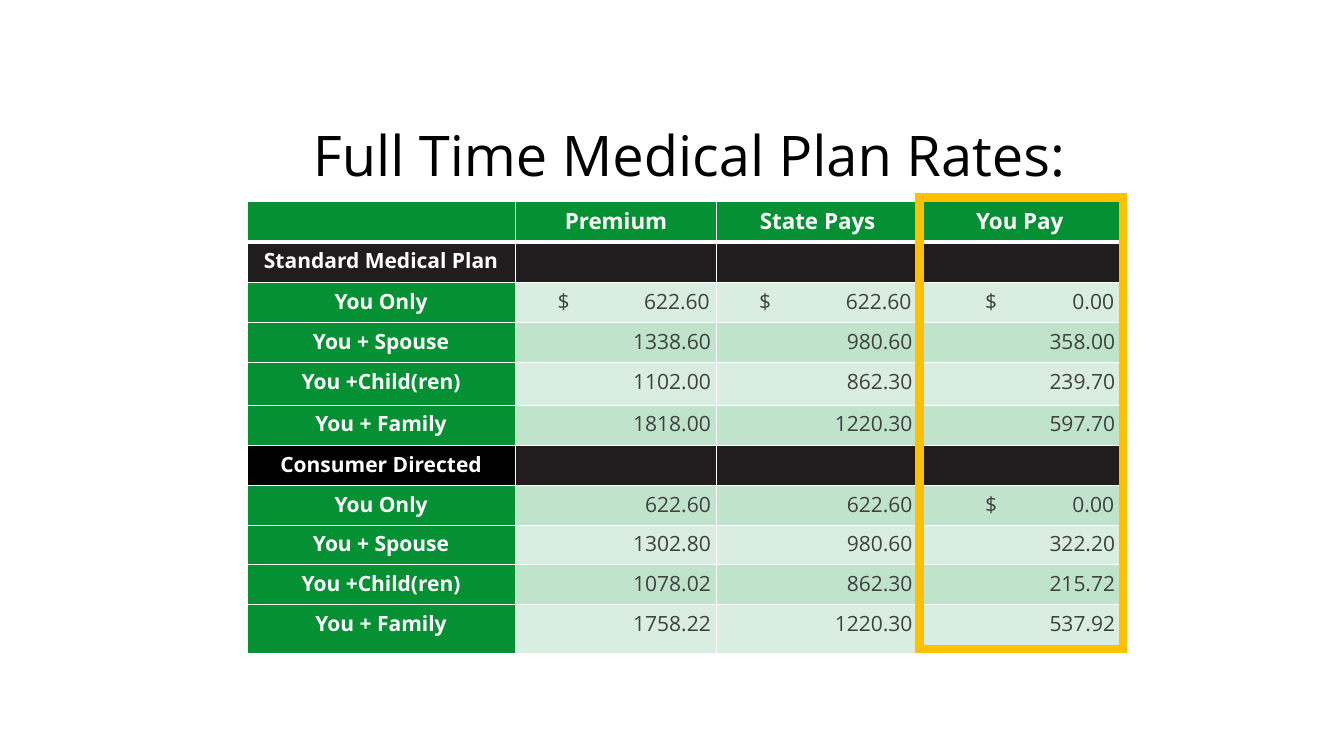
import pptx
import pptx.dml.color
import pptx.enum.shapes
import pptx.enum.text
import pptx.oxml
import pptx.oxml.ns
import pptx.util
from pptx.util import Inches

COLORS = {
    "green": "059033",
    "charcoal": "211D1E",
    "black": "000000",
    "white": "FFFFFF",
    "figure": "404040",
    "gold": "FFC000",
}
FONT = "Open Sans"
ALIGN = pptx.enum.text.PP_ALIGN

COLUMN_WIDTHS = [2.66, 2, 2, 2.01]
ROW_HEIGHTS = [0.4, 0.4, 0.4, 0.4, 0.42, 0.4, 0.4, 0.39, 0.39, 0.4, 0.48]
CELL_MARGIN = 0.06
PLAN_ROWS = (1, 6)
# A tab before and after the dollar sign places it apart from its amount
RATES = [
    ["", "Premium", "State Pays", "You Pay"],
    ["Standard Medical Plan", "", "", ""],
    ["You Only", "\t$\t622.60", "\t$\t622.60", "\t$\t0.00"],
    ["You + Spouse", "1338.60", "980.60", "358.00"],
    ["You +Child(ren)", "1102.00", "862.30", "239.70"],
    ["You + Family", "1818.00", "1220.30", "597.70"],
    ["Consumer Directed", "", "", ""],
    ["You Only", "622.60", "622.60", "\t$\t0.00"],
    ["You + Spouse", "1302.80", "980.60", "322.20"],
    ["You +Child(ren)", "1078.02", "862.30", "215.72"],
    ["You + Family", "1758.22", "1220.30", "537.92"],
]


def rgb(name):
    return pptx.dml.color.RGBColor.from_string(COLORS[name])


def add_xml(parent, xml):
    namespace = pptx.oxml.ns.nsdecls("a")
    element = pptx.oxml.parse_xml(xml.replace(" ", f" {namespace} ", 1))
    parent.append(element)


def format_font(font, size, color, bold=False):
    font.name = FONT
    font.size = pptx.util.Pt(size)
    font.bold = bold
    font.color.rgb = rgb(color)


def add_title(slide, text):
    title = slide.shapes.title
    title.left, title.top = Inches(2.45), Inches(1.18)
    title.width, title.height = Inches(8.77), Inches(0.78)
    frame = title.text_frame
    frame.text = text
    frame.auto_size = pptx.enum.text.MSO_AUTO_SIZE.NONE
    frame.vertical_anchor = pptx.enum.text.MSO_ANCHOR.MIDDLE
    paragraph = frame.paragraphs[0]
    paragraph.alignment = ALIGN.CENTER
    paragraph.line_spacing = 0.9
    format_font(paragraph.font, 40, "black")


def set_borders(cell, row):
    widths = {"L": 1, "R": 1, "T": 3 if row == 1 else 1, "B": 3 if row == 0 else 1}
    for side, points in widths.items():
        add_xml(
            cell._tc.get_or_add_tcPr(),
            f'<a:ln{side} w="{pptx.util.Pt(points)}"><a:solidFill>'
            f'<a:srgbClr val="{COLORS["white"]}"/></a:solidFill></a:ln{side}>',
        )


def set_fill(cell, row, column):
    is_figure = row > 0 and row not in PLAN_ROWS and column > 0
    color = "green"
    if row in PLAN_ROWS:
        color = "black" if (row, column) == (6, 0) else "charcoal"
    cell.fill.solid()
    cell.fill.fore_color.rgb = rgb(color)
    if is_figure:
        opacity = 15 if row % 2 == 0 else 25
        # The fill is the last child, after the border lines
        swatch = cell._tc.tcPr[-1][0]
        add_xml(swatch, f'<a:alpha val="{opacity * 1000}"/>')
    return is_figure


def set_dollar_tabs(paragraph, column, amount):
    sign = 0.6 if amount.endswith("\t0.00") else 0.36
    edge = COLUMN_WIDTHS[column] - 2 * CELL_MARGIN - 0.01
    add_xml(
        paragraph._p.get_or_add_pPr(),
        f'<a:tabLst ><a:tab pos="{Inches(sign)}" algn="l"/>'
        f'<a:tab pos="{Inches(edge)}" algn="r"/></a:tabLst>',
    )


def fill_cell(cell, row, column, text):
    set_borders(cell, row)
    is_figure = set_fill(cell, row, column)
    cell.margin_left = cell.margin_right = Inches(CELL_MARGIN)
    cell.margin_top = cell.margin_bottom = 0
    cell.text = text
    paragraph = cell.text_frame.paragraphs[0]
    paragraph.line_spacing = 1.15
    if "\t" in text:
        paragraph.alignment = ALIGN.LEFT
        set_dollar_tabs(paragraph, column, text)
    else:
        paragraph.alignment = ALIGN.RIGHT if is_figure else ALIGN.CENTER
    size = 16 if row == 0 else 15
    format_font(paragraph.font, size, "figure" if is_figure else "white", not is_figure)


def add_rate_table(slide):
    frame = slide.shapes.add_table(
        len(ROW_HEIGHTS), len(COLUMN_WIDTHS), Inches(2.45), Inches(2),
        Inches(sum(COLUMN_WIDTHS)), Inches(sum(ROW_HEIGHTS)),
    )
    table = frame.table
    table.first_row = table.horz_banding = False
    for column, width in zip(table.columns, COLUMN_WIDTHS):
        column.width = Inches(width)
    for row, height in zip(table.rows, ROW_HEIGHTS):
        row.height = Inches(height)
    for row, texts in enumerate(RATES):
        for column, text in enumerate(texts):
            fill_cell(table.cell(row, column), row, column, text)


def add_highlight(slide):
    shape = slide.shapes.add_shape(
        pptx.enum.shapes.MSO_SHAPE.RECTANGLE,
        Inches(9.12), Inches(1.96), Inches(2.02), Inches(4.48),
    )
    shape.shadow.inherit = False
    shape.fill.background()
    shape.line.color.rgb = rgb("gold")
    shape.line.width = pptx.util.Pt(6)
    add_xml(shape.line._get_or_add_ln(), '<a:miter lim="800000"/>')


def main():
    presentation = pptx.Presentation()
    presentation.slide_width = Inches(13.33)
    presentation.slide_height = Inches(7.5)
    slide = presentation.slides.add_slide(presentation.slide_layouts[5])

    add_title(slide, "Full Time Medical Plan Rates:")
    add_rate_table(slide)
    # Frame around the "You Pay" column
    add_highlight(slide)

    presentation.save("out.pptx")


if __name__ == "__main__":
    main()
